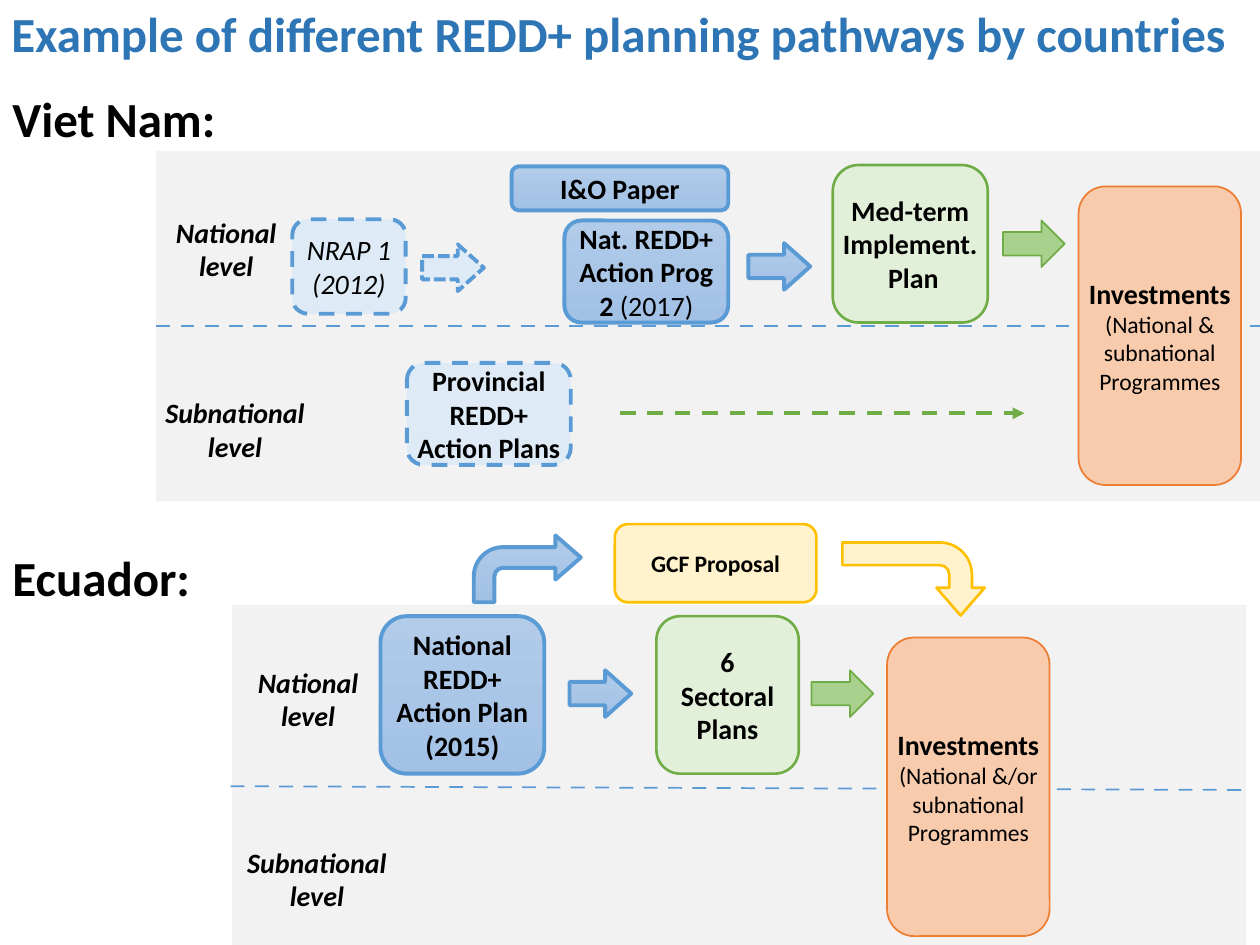
from lxml.etree import SubElement
from pptx import Presentation
from pptx.dml.color import RGBColor
from pptx.enum.dml import MSO_LINE
from pptx.enum.shapes import MSO_CONNECTOR, MSO_SHAPE
from pptx.enum.text import MSO_ANCHOR, MSO_AUTO_SIZE, PP_ALIGN
from pptx.oxml.ns import qn
from pptx.util import Inches, Pt

COLORS = {
    "title": "2E75B6", "text": "000000", "panel": "F2F2F2",
    "blue": "5B9BD5", "blue_top": "B1CBE9", "blue_bottom": "A3C1E5", "pale_blue": "DEEBF6",
    "green": "70AD47", "pale_green": "E2F0D9", "mid_green": "A9D18E",
    "orange": "ED7D31", "pale_orange": "F8CBAD",
    "yellow": "FFC000", "pale_yellow": "FFF2CC",
}
STYLES = {
    "plan": ("gradient", "blue", 2.25, None),
    "draft": ("pale_blue", "blue", 2.25, MSO_LINE.DASH),
    "draft_arrow": ("pale_blue", "blue", 2.25, MSO_LINE.SQUARE_DOT),
    "sector": ("pale_green", "green", 1.5, None),
    "sector_arrow": ("mid_green", "green", 1, None),
    "investment": ("pale_orange", "orange", 1, None),
    "proposal": ("pale_yellow", "yellow", 1.5, None),
    "panel": ("panel", None, 0, None),
}
BENT_ADJUSTMENTS = (0.31, 0.33, 0.38, 0.44)


class PathwaySlide:
    font_name = "Calibri"
    body_size = 16
    small_size = 13.5
    heading_size = 28

    def __init__(self, presentation):
        self.slide = presentation.slides.add_slide(presentation.slide_layouts[5])
        self.shapes = self.slide.shapes

    def color(self, name):
        return RGBColor.from_string(COLORS[name])

    def format(self, paragraph, size, bold=True, italic=False, color="text", align=PP_ALIGN.CENTER):
        paragraph.alignment = align
        font = paragraph.font
        font.name, font.size = self.font_name, Pt(size)
        font.bold, font.italic = bold, italic
        font.color.rgb = self.color(color)

    def title(self, text, left, top, width, height):
        shape = self.shapes.title
        shape.left, shape.top = Inches(left), Inches(top)
        shape.width, shape.height = Inches(width), Inches(height)
        frame = shape.text_frame
        frame.text = text
        frame.word_wrap = True
        frame.auto_size = MSO_AUTO_SIZE.NONE
        frame.vertical_anchor = MSO_ANCHOR.MIDDLE
        self.format(frame.paragraphs[0], self.heading_size, color="title", align=PP_ALIGN.LEFT)

    def textbox(self, text, left, top, width, height, wrap):
        frame = self.shapes.add_textbox(
            Inches(left), Inches(top), Inches(width), Inches(height)).text_frame
        frame.word_wrap = wrap
        frame.text = text
        return frame.paragraphs[0]

    def heading(self, text, top, width):
        paragraph = self.textbox(text, 0, top, width, 0.57, False)
        self.format(paragraph, self.heading_size, align=PP_ALIGN.LEFT)

    def level(self, text, left, top, width):
        paragraph = self.textbox(text, left, top, width, 0.64, True)
        self.format(paragraph, self.body_size, italic=True)

    def shape(self, preset, style, left, top, width, height, adjustments=(), rotation=0):
        fill, line, weight, dash = STYLES[style]
        shape = self.shapes.add_shape(
            preset, Inches(left), Inches(top), Inches(width), Inches(height))
        shape.shadow.inherit = False
        shape.rotation = rotation
        for index, value in enumerate(adjustments):
            shape.adjustments[index] = value
        if fill == "gradient":
            shape.fill.gradient()
            shape.fill.gradient_angle = 270
            for stop, name, position in zip(
                    shape.fill.gradient_stops, ("blue_top", "blue_bottom"), (0, 1)):
                stop.color.rgb = self.color(name)
                stop.position = position
        else:
            shape.fill.solid()
            shape.fill.fore_color.rgb = self.color(fill)
        if line:
            shape.line.color.rgb = self.color(line)
            shape.line.width = Pt(weight)
            shape.line.dash_style = dash
        else:
            shape.line.fill.background()
        return shape

    def panel(self, left, top, width, height):
        return self.shape(MSO_SHAPE.RECTANGLE, "panel", left, top, width, height)

    def box(self, style, lines, left, top, width, height, size=None, bold=True, italic=False):
        shape = self.shape(MSO_SHAPE.ROUNDED_RECTANGLE, style, left, top, width, height)
        frame = shape.text_frame
        frame.margin_left = frame.margin_right = 0
        frame.vertical_anchor = MSO_ANCHOR.MIDDLE
        frame.text = "\n".join(lines)
        for paragraph in frame.paragraphs:
            self.format(paragraph, size or self.body_size, bold, italic)
        return frame

    def investments(self, scope, left, top):
        lines = ("Investments", f"({scope} subnational", "Programmes")
        frame = self.box("investment", lines, left, top, 1.29, 2.37)
        for paragraph in frame.paragraphs[1:]:
            self.format(paragraph, self.small_size, bold=False)

    def arrow(self, style, left, top, head=0.5):
        self.shape(MSO_SHAPE.RIGHT_ARROW, style, left, top, 0.49, 0.37, (0.5, head))

    def bent_arrow(self, style, left, top, width, height, rotation=0):
        self.shape(MSO_SHAPE.BENT_ARROW, style, left, top, width, height,
                   BENT_ADJUSTMENTS, rotation)

    def line(self, color, weight, start, end):
        connector = self.shapes.add_connector(
            MSO_CONNECTOR.STRAIGHT, *(Inches(value) for value in start + end))
        connector.line.color.rgb = self.color(color)
        connector.line.width = Pt(weight)
        SubElement(connector._element.spPr, qn("a:effectLst"))
        return connector

    def divider(self, start, end):
        connector = self.line("blue", 1, start, end)
        dashes = SubElement(connector.line._get_or_add_ln(), qn("a:custDash"))
        SubElement(dashes, qn("a:ds"), d="800000", sp="600000")
        return connector

    def dashed_arrow(self, start, end):
        connector = self.line("green", 2.25, start, end)
        connector.line.dash_style = MSO_LINE.DASH
        SubElement(connector.line._get_or_add_ln(), qn("a:tailEnd"), type="triangle")


def add_viet_nam(page):
    page.heading("Viet Nam:", 0.65, 1.84)
    panel = page.panel(1.24, 1.2, 8.76, 2.78)
    divider = page.divider((1.24, 2.59), (10, 2.59))
    divider.begin_connect(panel, 1)
    divider.end_connect(panel, 3)
    page.investments("National &", 8.56, 1.48)
    page.level("National level", 1.25, 1.66, 1.09)
    page.level("Subnational level", 1.19, 3.09, 1.35)
    page.box("sector", ("Med-term Implement.", " Plan"), 6.61, 1.31, 1.23, 1.25)
    programme = page.box("plan", ("Nat. REDD+ Action Prog 2 ",), 4.48, 1.75, 1.3, 0.81)
    year = programme.paragraphs[0].add_run()
    year.text = "(2017)"
    year.font.bold = False
    page.arrow("sector_arrow", 7.96, 1.75)
    page.arrow("plan", 5.94, 1.93, 0.56)
    page.box("plan", ("I&O Paper",), 4.06, 1.32, 1.72, 0.35)
    page.box("draft", ("NRAP 1", "(2012)"), 2.32, 1.74, 0.9, 0.75, bold=False, italic=True)
    page.arrow("draft_arrow", 3.35, 1.94, 0.56)
    page.box("draft", ("Provincial REDD+ Action Plans",), 3.23, 2.88, 1.3, 0.81)
    page.dashed_arrow((4.92, 3.28), (8.13, 3.28))


def add_ecuador(page):
    page.heading("Ecuador:", 4.3, 1.63)
    page.panel(1.84, 4.8, 8.05, 2.78)
    page.divider((1.83, 6.24), (9.89, 6.27))
    page.investments("National &/or", 7.04, 5.06)
    page.level("National level", 1.9, 5.23, 1.09)
    page.level("Subnational level", 1.84, 6.66, 1.35)
    page.box("sector", ("6", "Sectoral Plans"), 5.21, 4.89, 1.13, 1.25)
    page.box("plan", ("National REDD+ Action Plan", "(2015)"), 3.02, 4.89, 1.3, 1.25)
    page.arrow("sector_arrow", 6.44, 5.32)
    page.arrow("plan", 4.52, 5.32, 0.56)
    page.box("proposal", ("GCF Proposal",), 4.88, 4.16, 1.6, 0.62, size=page.small_size)
    page.bent_arrow("plan", 3.76, 4.25, 0.85, 0.53)
    page.bent_arrow("proposal", 6.96, 4.03, 0.58, 1.13, rotation=90)


def main():
    presentation = Presentation()
    presentation.slide_width, presentation.slide_height = Inches(10), Inches(7.5)
    page = PathwaySlide(presentation)
    page.title("Example of different REDD+ planning pathways by countries", -0.01, -0.02, 10.01, 0.57)
    add_viet_nam(page)
    add_ecuador(page)
    presentation.save("out.pptx")


if __name__ == "__main__":
    main()
